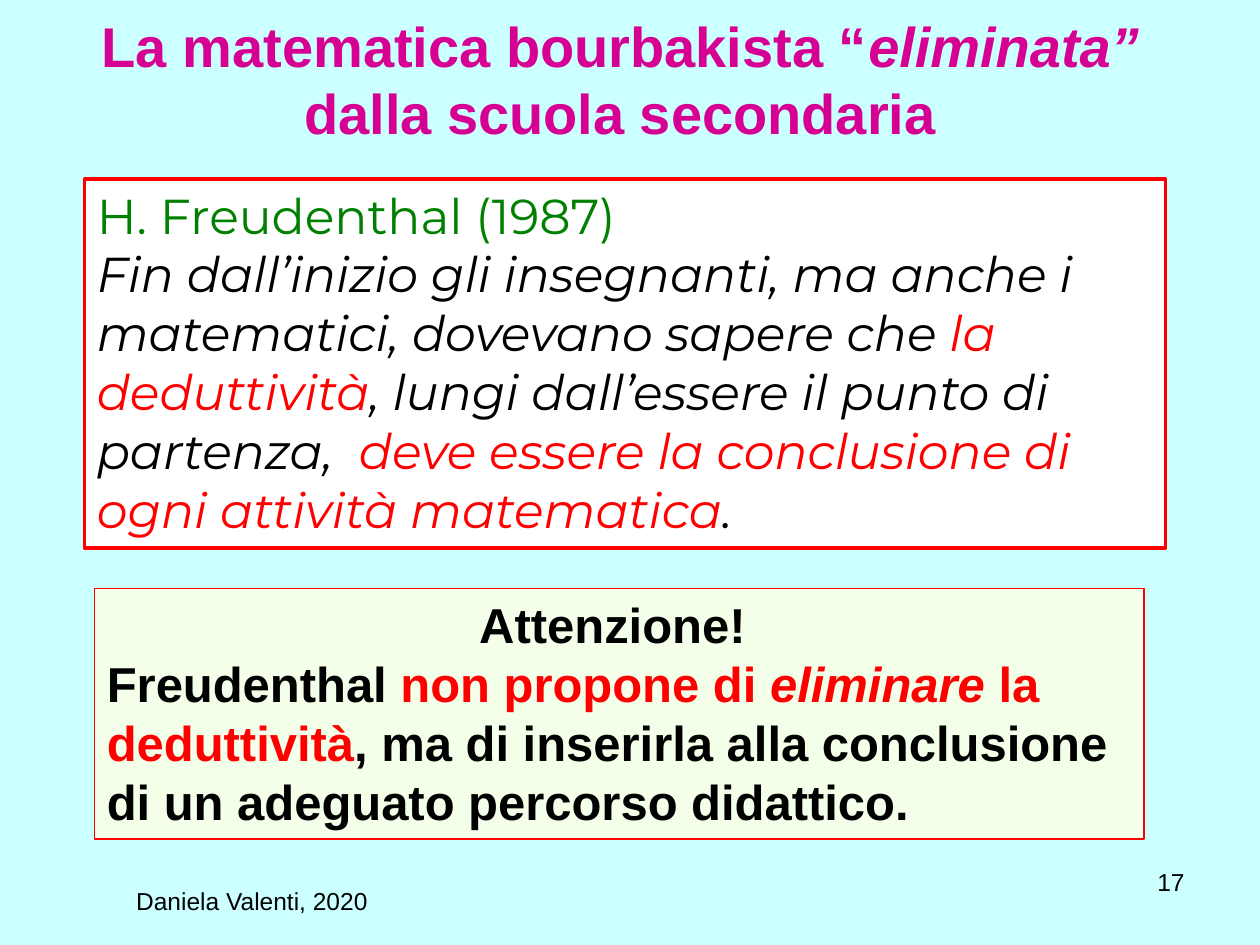
from dataclasses import dataclass

from pptx import Presentation
from pptx.dml.color import RGBColor
from pptx.enum.shapes import MSO_SHAPE
from pptx.enum.text import MSO_ANCHOR, MSO_AUTO_SIZE, PP_ALIGN
from pptx.util import Inches, Pt

BACKGROUND = RGBColor(0xCC, 0xFF, 0xFF)
MAGENTA = RGBColor(0xD6, 0x00, 0x93)
GREEN = RGBColor(0x00, 0x80, 0x00)
RED = RGBColor(0xFF, 0x00, 0x00)
BLACK = RGBColor(0x00, 0x00, 0x00)
WHITE = RGBColor(0xFF, 0xFF, 0xFF)
PALE_GREEN = RGBColor(0xF4, 0xFF, 0xEA)


@dataclass(frozen=True)
class Span:
    text: str
    color: RGBColor | None = None
    italic: bool | None = None


@dataclass(frozen=True)
class Line:
    spans: tuple[Span, ...]
    size: int
    font: str = "Arial"
    color: RGBColor = BLACK
    bold: bool = False
    italic: bool = False
    align: PP_ALIGN = PP_ALIGN.LEFT


@dataclass(frozen=True)
class Panel:
    box: tuple[float, float, float, float]
    fill: RGBColor
    border: float
    lines: tuple[Line, ...]


def write_lines(frame, lines: tuple[Line, ...]) -> None:
    """Fill a text frame, one paragraph for each line."""
    frame.word_wrap = True
    for index, line in enumerate(lines):
        paragraph = frame.add_paragraph() if index else frame.paragraphs[0]
        paragraph.alignment = line.align
        font = paragraph.font
        font.name, font.size = line.font, Pt(line.size)
        font.bold, font.italic = line.bold, line.italic
        font.color.rgb = line.color
        for span in line.spans:
            run = paragraph.add_run()
            run.text = span.text
            run.font.italic = span.italic
            # Runs take the paragraph's look unless they state their own
            run.font.color.rgb = span.color or line.color


def add_panel(slide, panel: Panel) -> None:
    shape = slide.shapes.add_shape(MSO_SHAPE.RECTANGLE, *map(Inches, panel.box))
    shape.shadow.inherit = False
    shape.fill.solid()
    shape.fill.fore_color.rgb = panel.fill
    shape.line.color.rgb = RED
    shape.line.width = Pt(panel.border)
    shape.text_frame.vertical_anchor = MSO_ANCHOR.TOP
    write_lines(shape.text_frame, panel.lines)


def add_label(slide, box: tuple[float, float, float, float], line: Line) -> None:
    label = slide.shapes.add_textbox(*map(Inches, box))
    write_lines(label.text_frame, (line,))


TITLE = Line(
    (
        Span("La matematica bourbakista “"),
        Span("eliminata”", italic=True),
        Span(" dalla scuola secondaria"),
    ),
    size=32, color=MAGENTA, bold=True, align=PP_ALIGN.CENTER,
)

QUOTE = Panel(
    (0.67, 1.42, 8.58, 2.93), WHITE, 2,
    (
        Line((Span("H. Freudenthal (1987)"),), 28, "Montserrat", GREEN),
        Line(
            (
                Span("Fin dall’inizio gli insegnanti, ma anche i matematici, "
                     "dovevano sapere che "),
                Span("la deduttività", RED),
                Span(", lungi dall’essere il punto di partenza,  "),
                Span("deve essere la conclusione di ogni attività matematica", RED),
                Span("."),
            ),
            28, "Montserrat", italic=True,
        ),
    ),
)

WARNING = Panel(
    (0.75, 4.67, 8.33, 1.99), PALE_GREEN, 0.75,
    (
        Line((Span("Attenzione! "),), 28, bold=True, align=PP_ALIGN.CENTER),
        Line(
            (
                Span("Freudenthal "),
                Span("non propone di ", RED),
                Span("eliminare", RED, italic=True),
                Span(" la deduttività", RED),
                Span(", ma di inserirla alla conclusione di un adeguato "
                     "percorso didattico."),
            ),
            28, bold=True,
        ),
    ),
)


def main() -> None:
    presentation = Presentation()
    presentation.slide_width, presentation.slide_height = Inches(10), Inches(7.5)
    slide = presentation.slides.add_slide(presentation.slide_layouts[5])
    slide.background.fill.solid()
    slide.background.fill.fore_color.rgb = BACKGROUND

    # Title
    title = slide.shapes.title
    title.left, title.top = Inches(0.33), Inches(0)
    title.width, title.height = Inches(9.19), Inches(1.25)
    title.text_frame.auto_size = MSO_AUTO_SIZE.NONE
    title.text_frame.vertical_anchor = MSO_ANCHOR.MIDDLE
    write_lines(title.text_frame, (TITLE,))

    # Quotation and comment
    for panel in (QUOTE, WARNING):
        add_panel(slide, panel)

    # Page number and author
    add_label(slide, (7.17, 6.83, 2.33, 0.52),
              Line((Span("17"),), 14, align=PP_ALIGN.RIGHT))
    add_label(slide, (0, 6.98, 4, 0.52),
              Line((Span("Daniela Valenti, 2020"),), 14, align=PP_ALIGN.CENTER))

    presentation.save("out.pptx")


if __name__ == "__main__":
    main()
